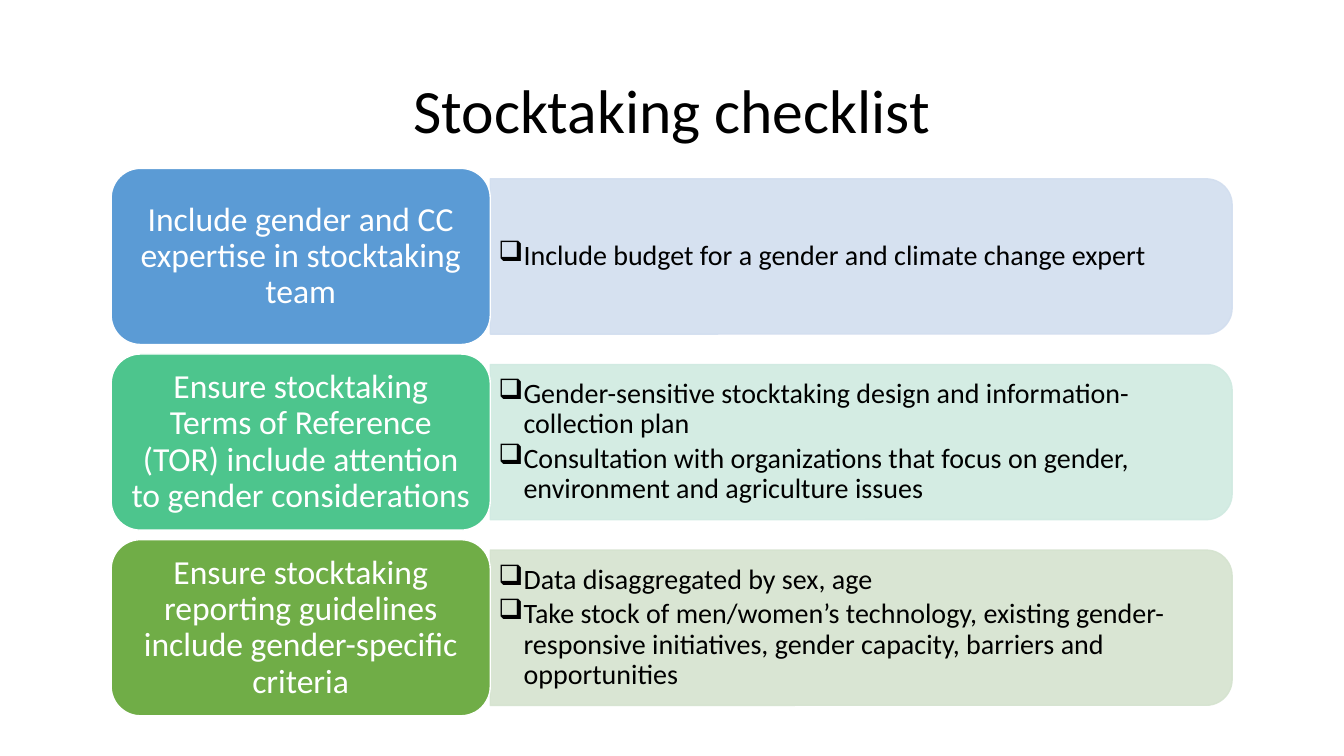
from pptx import Presentation
from pptx.dml.color import RGBColor
from pptx.enum.shapes import MSO_SHAPE as SHAPE
from pptx.enum.text import MSO_ANCHOR as ANCHOR, PP_ALIGN as ALIGN
from pptx.oxml.ns import qn
from pptx.util import Pt
from lxml.etree import SubElement

ROWS = [
    ("5B9BD5", "D2DEEF", "Include gender and CC expertise in stocktaking team",
     ["Include budget for a gender and climate change expert"]),
    ("4DC58D", "D0EAE1",
     "Ensure stocktaking Terms of Reference (TOR) include attention to gender considerations",
     ["Gender-sensitive stocktaking design and information-collection plan",
      "Consultation with organizations that focus on gender, environment and agriculture issues"]),
    ("70AD47", "D5E3CF",
     "Ensure stocktaking reporting guidelines include gender-specific criteria",
     ["Data disaggregated by sex, age",
      "Take stock of men/women’s technology, existing gender-responsive initiatives, "
      "gender capacity, barriers and opportunities"]),
]


def rgb(value):
    return RGBColor.from_string(value)


class Checklist:
    font = "Calibri"
    label_x, label_w, label_h = 79.4, 270.8, 125.8
    panel_w, panel_h = 529.9, 110.9
    first_y, pitch = 120.3, 132.6

    def __init__(self, s):
        self.s = s

    def paragraph(self, tf, i, text, size, color, align):
        p = tf.paragraphs[0] if i == 0 else tf.add_paragraph()
        p.alignment = align
        p.line_spacing = 0.9
        r = p.add_run()
        r.text = text
        r.font.name = self.font
        r.font.size = Pt(size)
        r.font.color.rgb = rgb(color)
        return p

    def textbox(self, x, y, w, h):
        tf = self.s.shapes.add_textbox(Pt(x), Pt(y), Pt(w), Pt(h)).text_frame
        tf.word_wrap = True
        tf.vertical_anchor = ANCHOR.MIDDLE
        return tf

    def shape(self, kind, x, y, w, h, fill, line):
        sp = self.s.shapes.add_shape(kind, Pt(x), Pt(y), Pt(w), Pt(h))
        sp.shadow.inherit = False
        sp.fill.solid()
        sp.fill.fore_color.rgb = rgb(fill)
        sp.line.color.rgb = rgb(line)
        sp.line.width = Pt(1)
        return sp

    def title(self, text):
        tf = self.textbox(66, 28.8, 828, 104.4)
        self.paragraph(tf, 0, text, 44, "000000", ALIGN.CENTER)

    def panel(self, middle, color):
        center = self.label_x + self.label_w + self.panel_w / 2
        sp = self.shape(SHAPE.ROUND_2_SAME_RECTANGLE, center - self.panel_h / 2,
                        middle - self.panel_w / 2, self.panel_h, self.panel_w, color, color)
        sp.rotation = 90
        for clr in sp._element.spPr.iter(qn("a:srgbClr")):
            SubElement(clr, qn("a:alpha")).set("val", "90000")

    def bullets(self, middle, items):
        tf = self.textbox(self.label_x + self.label_w, middle - 50, 524.4, 100)
        tf.margin_left = tf.margin_right = Pt(5.8)
        tf.margin_top = tf.margin_bottom = Pt(2.9)
        for i, item in enumerate(items):
            p = self.paragraph(tf, i, item, 20, "000000", ALIGN.LEFT)
            p.space_after = Pt(3)
            pPr = p._p.get_or_add_pPr()
            pPr.set("marL", str(Pt(18)))
            pPr.set("indent", str(-Pt(18)))
            SubElement(pPr, qn("a:buChar")).set("char", "❑")

    def label(self, y, text, color):
        sp = self.shape(SHAPE.ROUNDED_RECTANGLE, self.label_x, y,
                        self.label_w, self.label_h, color, "FFFFFF")
        tf = sp.text_frame
        tf.word_wrap = True
        tf.vertical_anchor = ANCHOR.MIDDLE
        self.paragraph(tf, 0, text, 24, "FFFFFF", ALIGN.CENTER)

    def row(self, i, color, tint, text, items):
        y = self.first_y + i * self.pitch
        middle = y + self.label_h / 2
        self.panel(middle, tint)
        self.bullets(middle, items)
        self.label(y, text, color)


def main():
    prs = Presentation()
    prs.slide_width, prs.slide_height = Pt(960), Pt(540)
    checklist = Checklist(prs.slides.add_slide(prs.slide_layouts[6]))
    checklist.title("Stocktaking checklist")
    for i, row in enumerate(ROWS):
        checklist.row(i, *row)
    prs.save("out.pptx")


if __name__ == "__main__":
    main()
